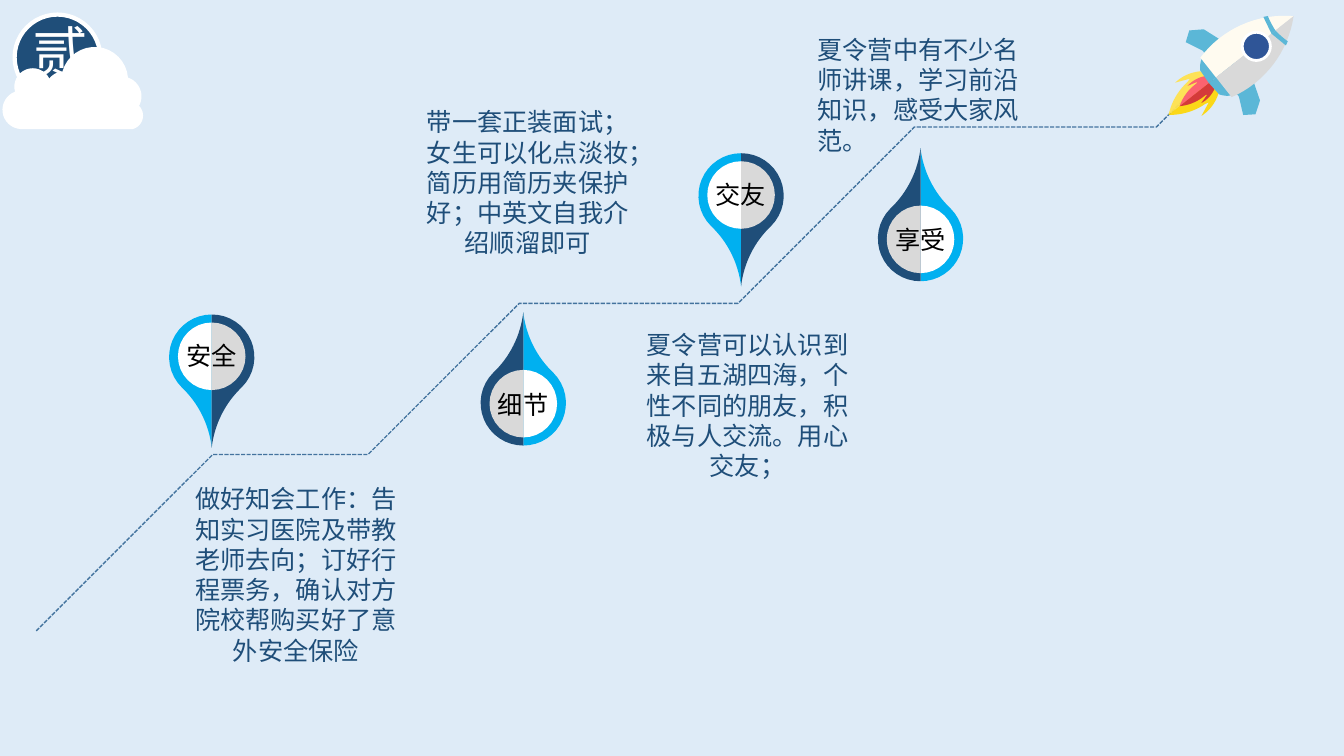
from math import cos, radians, sin

from lxml.etree import SubElement
from pptx import Presentation
from pptx.dml.color import RGBColor
from pptx.enum.dml import MSO_LINE
from pptx.enum.shapes import MSO_SHAPE
from pptx.enum.text import MSO_AUTO_SIZE, PP_ALIGN
from pptx.oxml.ns import qn
from pptx.util import Cm, Pt

FONT = "Noto Sans CJK SC"
SKY, NAVY, CYAN, GREY, TEAL, WHITE = "DEEBF7", "1F4E79", "00B0F0", "D9D9D9", "5BB7D7", "FFFFFF"


def color(value):
    return RGBColor.from_string(value)


def inches(value):
    return Cm(value * 2.54)


def flatten(steps, pieces=16):
    """Points of an outline: (x, y) is a corner, (x, y, angle) the end of an arc."""
    points = []
    for x, y, *arc in steps:
        end = complex(x, y)
        if arc:
            start, half = points[-1], radians(arc[0]) / 2
            for piece in range(1, pieces):
                t = piece / pieces
                turn = complex(cos((t - 1) * half), sin((t - 1) * half))
                points.append(start + (end - start) * turn * sin(t * half) / sin(half))
        points.append(end)
    return points


class Board:
    def __init__(self, page):
        self.page = page
        self.layer = page.shapes
        page.background.fill.solid()
        page.background.fill.fore_color.rgb = color(SKY)

    def group(self):
        self.layer = self.page.shapes.add_group_shape().shapes

    def ungroup(self):
        self.layer = self.page.shapes

    def paint(self, shape, fill=None, line=None, opacity=100, **line_format):
        shape.shadow.inherit = False
        if fill:
            shape.fill.solid()
            shape.fill.fore_color.rgb = color(fill)
            if opacity < 100:
                tint = shape.fill._xPr.find(qn("a:solidFill"))[0]
                SubElement(tint, qn("a:alpha"), val=str(opacity * 1000))
        else:
            shape.fill.background()
        if line:
            shape.line.color.rgb = color(line)
            for name, value in line_format.items():
                setattr(shape.line, name, value)
        else:
            shape.line.fill.background()

    def outline(self, steps, origin=0, across=1, down=1j, close=True, **look):
        """Draw steps along the two given axes, starting from origin."""
        spots = [origin + point.real * across + point.imag * down for point in flatten(steps)]
        points = [(inches(spot.real), inches(spot.imag)) for spot in spots]
        builder = self.layer.build_freeform(*points[0], scale=1.0)
        builder.add_line_segments(points[1:], close=close)
        self.paint(builder.convert_to_shape(), **look)

    def circle(self, center_x, center_y, size, **look):
        box = (center_x - size / 2, center_y - size / 2, size, size)
        shape = self.layer.add_shape(MSO_SHAPE.OVAL, *map(inches, box))
        self.paint(shape, **look)

    def text(self, words, left, top, width, height, fill=NAVY, size=18, wrap=True, align=None):
        box = self.layer.add_textbox(*map(inches, (left, top, width, height)))
        frame_format = {"word_wrap": wrap, "auto_size": MSO_AUTO_SIZE.SHAPE_TO_FIT_TEXT}
        for name, value in frame_format.items():
            setattr(box.text_frame, name, value)
        para = box.text_frame.paragraphs[0]
        para.alignment = align
        span = para.add_run()
        span.text = words
        for name, value in {"name": FONT, "size": Pt(size)}.items():
            setattr(span.font, name, value)
        span.font.color.rgb = color(fill)
        SubElement(span.font._element, qn("a:ea"), typeface=FONT)

    def pin(self, words, tip_x, tip_y, turn):
        """A two-tone pin; turn is 1 for tip down and -1 for tip up."""
        self.group()
        for steps, fills in ((PIN_HALF, (CYAN, NAVY)), (DISC_HALF, (WHITE, GREY))):
            for side, fill in zip((1, -1), fills):
                self.outline(steps, complex(tip_x, tip_y), side * turn, turn * 1j, fill=fill)
        self.text(words, tip_x - 0.35, tip_y - 0.91 * turn - 0.2, 0.7, 0.4, "000000", wrap=False)
        self.ungroup()

    def rocket(self):
        """A rocket of mirrored halves about its slanted axis."""
        self.group()
        for steps, fills, opacities in ROCKET_HALVES:
            for side, fill, opacity in zip((1, -1), fills, opacities):
                self.outline(steps, ROCKET_TAIL, ROCKET_AXIS, side * ROCKET_AXIS * -1j,
                             fill=fill, opacity=opacity)
        self.circle(12.46, 0.46, 0.28, fill="2F5597", line=WHITE, width=Pt(2))
        self.ungroup()


# Left halves of a pin, measured from its tip
PIN_HALF = [(0, -1.32), (0, 0), (-0.3, -0.6, -40), (0, -1.32, 135)]
DISC_HALF = [(0, -0.57), (0, -1.24, 180)]

# Upper halves of the rocket, measured along its axis from the flame tip
ROCKET_TAIL, ROCKET_AXIS = 11.59 + 1.14j, 0.785 - 0.62j
FIN = [(0.86, 0.28), (0.86, 0), (0.66, 0), (0.66, 0.29), (0.58, 0.46), (0.68, 0.53), (0.8, 0.45)]
FLAME = [(0.56, 0), (0.56, 0.1), (0.52, 0.14), (0.25, 0.21, 40),
         (0.39, 0.15), (0.35, 0.14), (0, 0, 35)]
INNER_FLAME = [(0.14 + 0.75 * x, 0.52 * y, *arc) for x, y, *arc in FLAME]
TAIL = [(0.86, 0), (0.86, 0.22), (0.6, 0.23), (0.52, 0.15, 30), (0.51, 0)]
BODY = [(1.58, 0), (0.6, 0.25, 58), (0.6, 0)]
BAND = [(1.34, 0.18), (1.38, 0.16), (1.35, 0, 10), (1.3, 0)]
SOLID = (100, 100)
ROCKET_HALVES = [
    (FIN, (TEAL, TEAL), SOLID),
    (FLAME, ("FFE24F", "FFD700"), (95, 90)),
    (INNER_FLAME, ("FB6370", "D43A3A"), SOLID),
    (TAIL, (TEAL, TEAL), SOLID),
    (BODY, ("FFFBF0", GREY), SOLID),
    (BAND, (TEAL, TEAL), SOLID),
]

CLOUD = [(0.62, 0.71), (1.27, 0.77, 160), (1.38, 1.05, 100), (1.32, 1.28, 118),
         (0.2, 1.28), (0.15, 0.91, 155), (0.49, 0.78, 170), (0.62, 0.71, 50)]

# Each climb of the route is at 45 degrees, followed by a level run
CLIMBS_AND_RUNS = [(1.75, 1.54), (1.5, 2.17), (1.75, 2.4), (0.33, 0)]

# Label, pin tip, direction, advice, its left, top and lines, alignment
STOPS = [
    ("安全", 2.1, 4.44, 1, "做好知会工作：告知实习医院及带教老师去向；订好行程票务，确认对方院校帮购买好了意外安全保险",
     1.72, 4.75, 6, PP_ALIGN.CENTER),
    ("细节", 5.19, 3.1, -1, "带一套正装面试；女生可以化点淡妆；简历用简历夹保护好；中英文自我介绍顺溜即可",
     4.02, 1.01, 5, PP_ALIGN.CENTER),
    ("交友", 7.35, 2.84, 1, "夏令营可以认识到来自五湖四海，个性不同的朋友，积极与人交流。用心交友；",
     6.2, 3.22, 5, PP_ALIGN.CENTER),
    ("享受", 9.13, 1.47, -1, "夏令营中有不少名师讲课，学习前沿知识，感受大家风范。",
     8.01, 0.29, 4, None),
]


def main():
    deck = Presentation()
    deck.slide_width, deck.slide_height = inches(13.33), inches(7.5)
    board = Board(deck.slides.add_slide(deck.slide_layouts[6]))

    # Dashed route
    x, y = 0.36, 6.26
    route = [(x, y)]
    for climb, run in CLIMBS_AND_RUNS:
        x, y = x + climb, y - climb
        route.append((x, y))
        if run:
            x += run
            route.append((x, y))
    board.outline(route, close=False, line="43739E", width=Pt(1), dash_style=MSO_LINE.SQUARE_DOT)

    # Rocket with a plain porthole
    board.rocket()

    # Pins and advice
    for label, tip_x, tip_y, turn, advice, left, top, lines, align in STOPS:
        board.pin(label, tip_x, tip_y, turn)
        board.text(advice, left, top, 2.43, 0.1 + 0.3 * lines, align=align)

    # Chapter badge behind a cloud
    board.group()
    board.circle(0.57, 0.57, 0.85, fill=NAVY, line=WHITE, width=Pt(3))
    board.text("贰", 0.22, 0.12, 0.76, 0.77, WHITE, size=40, wrap=False)
    board.outline(CLOUD, fill=WHITE)

    deck.save("out.pptx")


if __name__ == "__main__":
    main()
